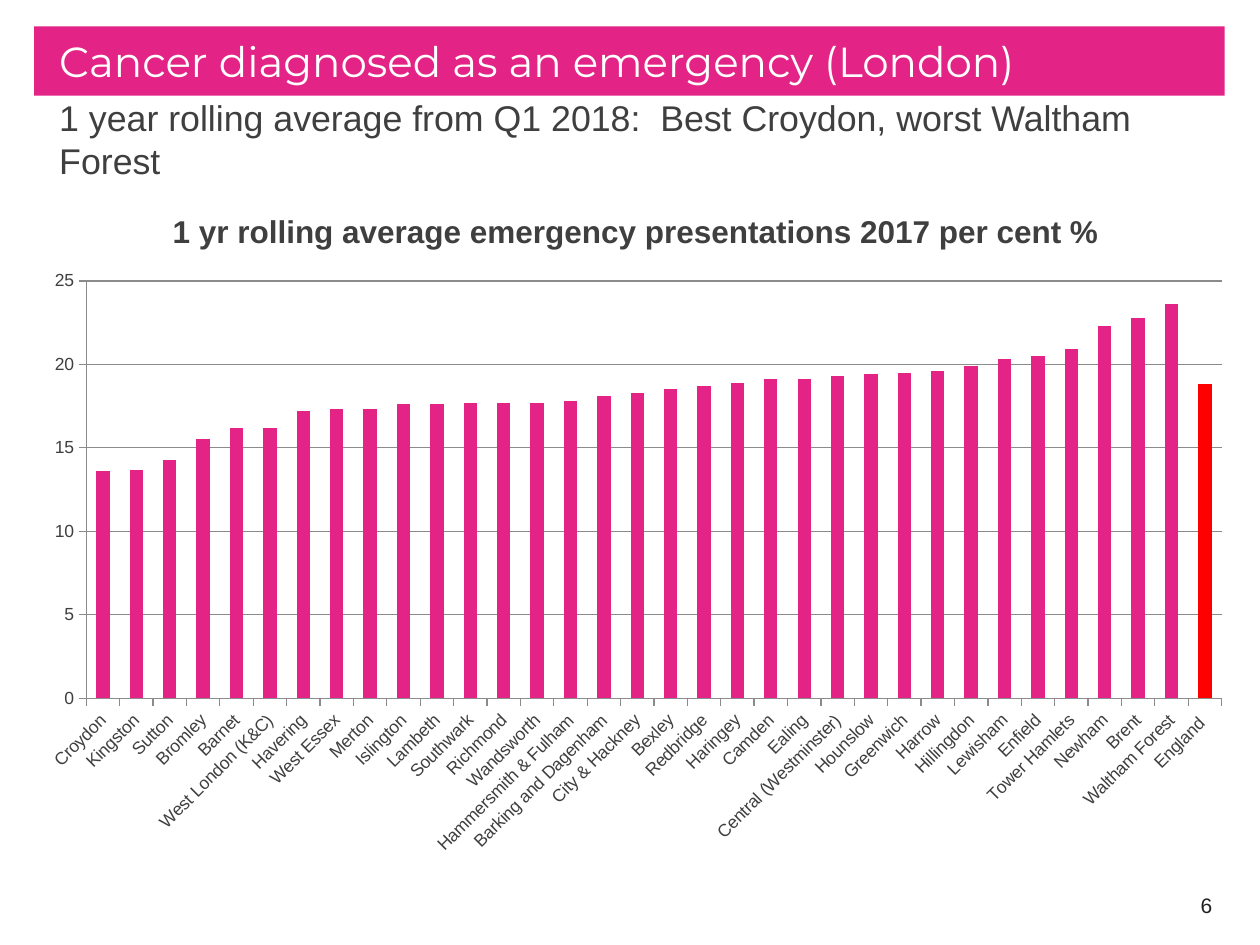
"""Build a slide ranking London areas by share of cancers diagnosed as an emergency."""
from lxml import etree
from pptx import Presentation
from pptx.chart.data import CategoryChartData
from pptx.dml.color import RGBColor
from pptx.enum.chart import XL_CHART_TYPE, XL_TICK_MARK
from pptx.enum.shapes import MSO_SHAPE
from pptx.enum.text import MSO_ANCHOR, PP_ALIGN
from pptx.oxml.ns import qn
from pptx.util import Inches, Pt

COLUMNS = XL_CHART_TYPE.COLUMN_CLUSTERED
OUTSIDE, NO_TICK = XL_TICK_MARK.OUTSIDE, XL_TICK_MARK.NONE
RECTANGLE = MSO_SHAPE.RECTANGLE
TOP, MIDDLE = MSO_ANCHOR.TOP, MSO_ANCHOR.MIDDLE
LEFT, RIGHT = PP_ALIGN.LEFT, PP_ALIGN.RIGHT

COLORS = {"pink": "E32486", "red": "FF0000", "white": "FFFFFF",
          "text": "3F3F3F", "number": "202020", "line": "8B8B8B"}
TITLE = "Cancer diagnosed as an emergency (London)"
SUBTITLE = "1 year rolling average from Q1 2018:  Best Croydon, worst Waltham Forest"
PAGE_NUMBER = "6"
CHART_TITLE = "1 yr rolling average emergency presentations 2017 per cent %"
RATES = [
    ("Croydon", 13.6), ("Kingston", 13.7), ("Sutton", 14.3), ("Bromley", 15.5),
    ("Barnet", 16.2), ("West London (K&C)", 16.2), ("Havering", 17.2),
    ("West Essex", 17.3), ("Merton", 17.3), ("Islington", 17.6),
    ("Lambeth", 17.6), ("Southwark", 17.7), ("Richmond", 17.7),
    ("Wandsworth", 17.7), ("Hammersmith & Fulham", 17.8),
    ("Barking and Dagenham", 18.1), ("City & Hackney", 18.3), ("Bexley", 18.5),
    ("Redbridge", 18.7), ("Haringey", 18.9), ("Camden", 19.1), ("Ealing", 19.1),
    ("Central (Westminster)", 19.3), ("Hounslow", 19.4), ("Greenwich", 19.5),
    ("Harrow", 19.6), ("Hillingdon", 19.9), ("Lewisham", 20.3),
    ("Enfield", 20.5), ("Tower Hamlets", 20.9), ("Newham", 22.3),
    ("Brent", 22.8), ("Waltham Forest", 23.6), ("England ", 18.8),
]
PLOT_SHARES = {"x": 0.05, "y": 0.14, "w": 0.93, "h": 0.61}
MARGIN, BAND_WIDTH, BAND_TOP, BAND_HEIGHT = 0.27, 9.45, 0.21, 0.55
NUMBER_WIDTH = 2.33


def color(name):
    return RGBColor.from_string(COLORS[name])


def set_font(font, size, name, family="Arial", bold=False):
    font.size, font.name, font.bold = Pt(size), family, bold
    font.color.rgb = color(name)


def write(shape, text, size, name, family="Arial", anchor=MIDDLE, align=LEFT,
          left=0.1, right=0.1):
    frame = shape.text_frame
    frame.word_wrap = True
    frame.vertical_anchor = anchor
    frame.margin_left, frame.margin_right = Inches(left), Inches(right)
    frame.margin_top = frame.margin_bottom = 0
    paragraph = frame.paragraphs[0]
    paragraph.text, paragraph.alignment = text, align
    set_font(paragraph.font, size, name, family)


def add_text(slide, box, *args, **options):
    write(slide.shapes.add_textbox(*map(Inches, box)), *args, **options)


def add_title_band(slide):
    box = (MARGIN, BAND_TOP, BAND_WIDTH, BAND_HEIGHT)
    band = slide.shapes.add_shape(RECTANGLE, *map(Inches, box))
    band.shadow.inherit = False
    band.fill.solid()
    band.fill.fore_color.rgb = color("pink")
    band.line.fill.background()
    write(band, TITLE, 24, "white", "Montserrat", left=0.2)


def place_plot(chart):
    plot_area = chart.plots[0]._element.getparent()
    for old in plot_area.findall(qn("c:layout")):
        plot_area.remove(old)
    layout = etree.Element(qn("c:layout"))
    manual = etree.SubElement(layout, qn("c:manualLayout"))
    settings = {"layoutTarget": "inner", "xMode": "edge", "yMode": "edge", **PLOT_SHARES}
    for tag, value in settings.items():
        etree.SubElement(manual, qn(f"c:{tag}")).set("val", str(value))
    plot_area.insert(0, layout)


def style_axis(axis):
    axis.major_tick_mark, axis.minor_tick_mark = OUTSIDE, NO_TICK
    axis.format.line.color.rgb = color("line")
    set_font(axis.tick_labels.font, 10, "text")


def add_rate_chart(slide):
    data = CategoryChartData()
    data.categories = [area for area, rate in RATES]
    data.add_series(CHART_TITLE, [rate for area, rate in RATES])
    box = map(Inches, (0.2, 1.47, 9.69, 5.43))
    chart = slide.shapes.add_chart(COLUMNS, *box, data).chart
    set_font(chart.font, 10, "text")
    chart.has_legend = False
    chart.has_title = True
    paragraph = chart.chart_title.text_frame.paragraphs[0]
    paragraph.text = CHART_TITLE
    set_font(paragraph.font, 18, "text", bold=True)
    chart.chart_title.include_in_layout = False

    plot = chart.plots[0]
    plot.vary_by_categories = False
    plot.gap_width = 150
    series = plot.series[0]
    england = series.points[len(RATES) - 1]
    for bars, name in ((series, "pink"), (england, "red")):
        bars.format.fill.solid()
        bars.format.fill.fore_color.rgb = color(name)

    category_axis, value_axis = chart.category_axis, chart.value_axis
    style_axis(category_axis)
    style_axis(value_axis)
    label_body = category_axis._element.find(qn("c:txPr")).find(qn("a:bodyPr"))
    label_body.set("rot", "-2700000")
    value_axis.minimum_scale, value_axis.maximum_scale = 0, 25
    value_axis.major_unit = 5
    value_axis.has_major_gridlines = True
    value_axis.major_gridlines.format.line.color.rgb = color("line")
    place_plot(chart)


def main():
    presentation = Presentation()
    presentation.slide_width, presentation.slide_height = Inches(10), Inches(7.5)
    slide = presentation.slides.add_slide(presentation.slide_layouts[6])
    add_title_band(slide)
    add_text(slide, (MARGIN, BAND_TOP + BAND_HEIGHT, BAND_WIDTH, 0.47),
             SUBTITLE, 20.4, "text", anchor=TOP, left=0.2, right=0)
    number_left = MARGIN + BAND_WIDTH - NUMBER_WIDTH
    add_text(slide, (number_left, 6.98, NUMBER_WIDTH, 0.4),
             PAGE_NUMBER, 12, "number", align=RIGHT)
    add_rate_chart(slide)
    presentation.save("out.pptx")


if __name__ == "__main__":
    main()
